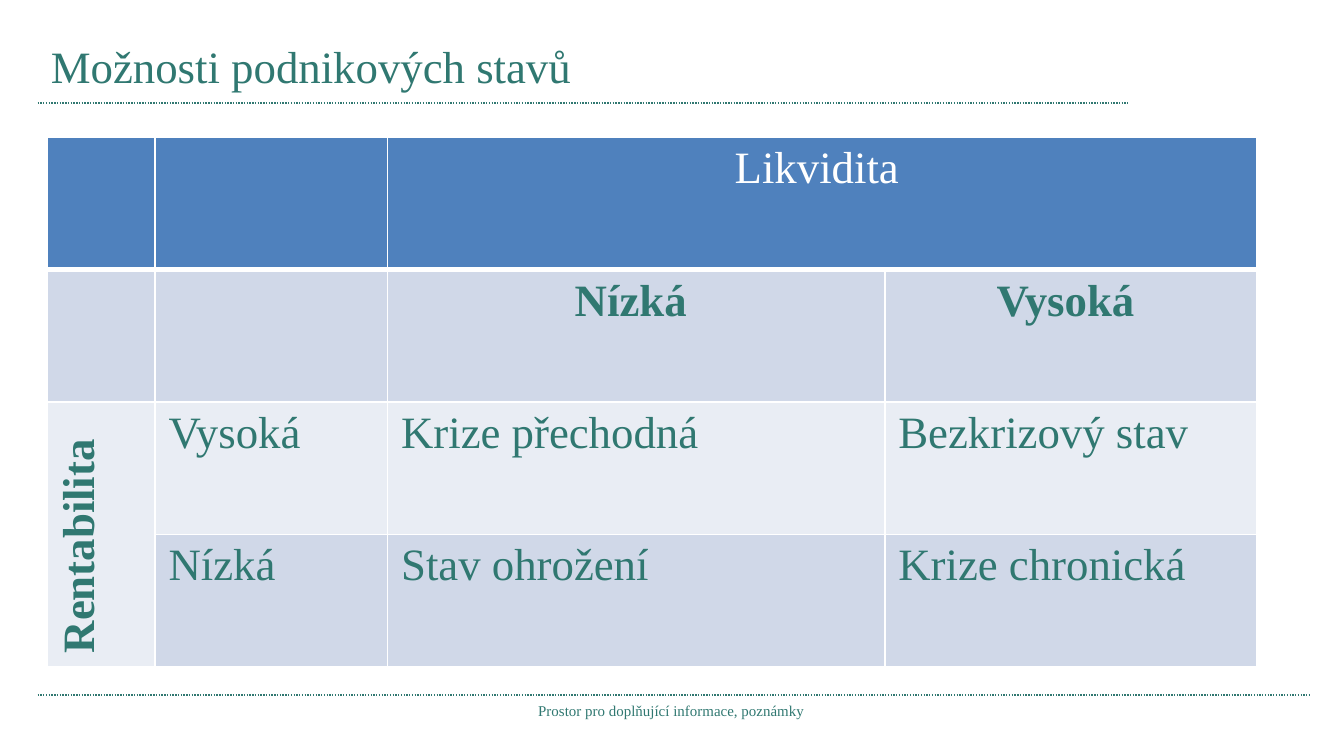
from lxml import etree
from pptx import Presentation
from pptx.dml.color import RGBColor
from pptx.enum.dml import MSO_LINE
from pptx.enum.shapes import MSO_CONNECTOR
from pptx.enum.text import MSO_ANCHOR, PP_ALIGN
from pptx.oxml.ns import qn
from pptx.util import Pt

LEFT, CENTER = PP_ALIGN.LEFT, PP_ALIGN.CENTER
MIDDLE = MSO_ANCHOR.MIDDLE
DOTTED = MSO_LINE.ROUND_DOT
STRAIGHT = MSO_CONNECTOR.STRAIGHT

GREEN, WHITE = "307871", "FFFFFF"
HEADER, BAND_DARK, BAND_LIGHT = "4F81BD", "D0D8E8", "E9EDF4"


def color(value):
    return RGBColor.from_string(value)


class SlideBuilder:
    font_name = "Times New Roman"

    def __init__(self, slide):
        self.slide = slide

    def fill_text(self, frame, text, size, ink=GREEN, align=LEFT, bold=False):
        paragraph = frame.paragraphs[0]
        paragraph.alignment = align
        run = paragraph.add_run()
        run.text = text
        formats = {"name": self.font_name, "size": Pt(size), "bold": bold}
        for name, value in formats.items():
            setattr(run.font, name, value)
        run.font.color.rgb = color(ink)

    def text(self, left, top, width, height, text, size, align=LEFT):
        shape = self.slide.shapes.add_textbox(Pt(left), Pt(top), Pt(width), Pt(height))
        frame = shape.text_frame
        formats = {"word_wrap": True, "vertical_anchor": MIDDLE}
        for name, value in formats.items():
            setattr(frame, name, value)
        self.fill_text(frame, text, size, align=align)

    def rule(self, left, right, top):
        connector = self.slide.shapes.add_connector(
            STRAIGHT, Pt(left), Pt(top), Pt(right), Pt(top))
        connector.line.color.rgb = color(GREEN)
        connector.line.width = Pt(0.75)
        connector.line.dash_style = DOTTED
        etree.SubElement(connector._element.spPr, qn("a:effectLst"))

    def borders(self, cell, bottom):
        properties = cell._tc.get_or_add_tcPr()
        for side, width in {"L": 1, "R": 1, "T": 1, "B": bottom}.items():
            line = etree.SubElement(properties, qn(f"a:ln{side}"), w=str(Pt(width)))
            fill = etree.SubElement(line, qn("a:solidFill"))
            etree.SubElement(fill, qn("a:srgbClr"), val=WHITE)

    def table(self, left, top, widths, row_height, rows, fills):
        height = row_height * len(rows)
        frame = self.slide.shapes.add_table(
            len(rows), len(widths), Pt(left), Pt(top), Pt(sum(widths)), Pt(height))
        table = frame.table
        table.horz_banding = False
        for column, width in zip(table.columns, widths):
            column.width = Pt(width)
        for row_index, (texts, fill) in enumerate(zip(rows, fills)):
            table.rows[row_index].height = Pt(row_height)
            is_header = row_index == 0
            for column_index, text in enumerate(texts):
                cell = table.cell(row_index, column_index)
                self.borders(cell, bottom=3 if is_header else 1)
                cell.fill.solid()
                cell.fill.fore_color.rgb = color(fill)
                if text:
                    self.fill_text(
                        cell.text_frame, text, 24,
                        ink=WHITE if is_header else GREEN,
                        align=CENTER if row_index < 2 else LEFT,
                        bold=row_index == 1 or (row_index > 1 and column_index == 0))
        return table


def main():
    presentation = Presentation()
    presentation.slide_width, presentation.slide_height = Pt(720), Pt(405)
    slide = presentation.slides.add_slide(presentation.slide_layouts[6])
    builder = SlideBuilder(slide)

    # Dotted rules
    builder.rule(20.16, 604.08, 55.2)
    builder.rule(20.16, 702, 372.4)

    # Footer and title
    builder.text(212.4, 372.24, 294.48, 16.56,
                 "Prostor pro doplňující informace, poznámky", 8, align=CENTER)
    builder.text(20.16, 15.12, 475.92, 40.32, "Možnosti podnikových stavů", 24)

    # Matrix of liquidity and profitability
    rows = [
        ["", "", "Likvidita ", ""],
        ["", "", "Nízká ", "Vysoká "],
        ["Rentabilita", "Vysoká", "Krize přechodná", "Bezkrizový stav"],
        ["", "Nízká", "Stav ohrožení", "Krize chronická"],
    ]
    table = builder.table(25.5, 73.6, [57.6, 124.6, 266.4, 199.4], 70.9, rows,
                          [HEADER, BAND_DARK, BAND_LIGHT, BAND_DARK])
    table.cell(0, 2).merge(table.cell(0, 3))
    side_heading = table.cell(2, 0)
    side_heading.merge(table.cell(3, 0))
    side_heading._tc.get_or_add_tcPr().set("vert", "vert270")

    presentation.save("out.pptx")


if __name__ == "__main__":
    main()
